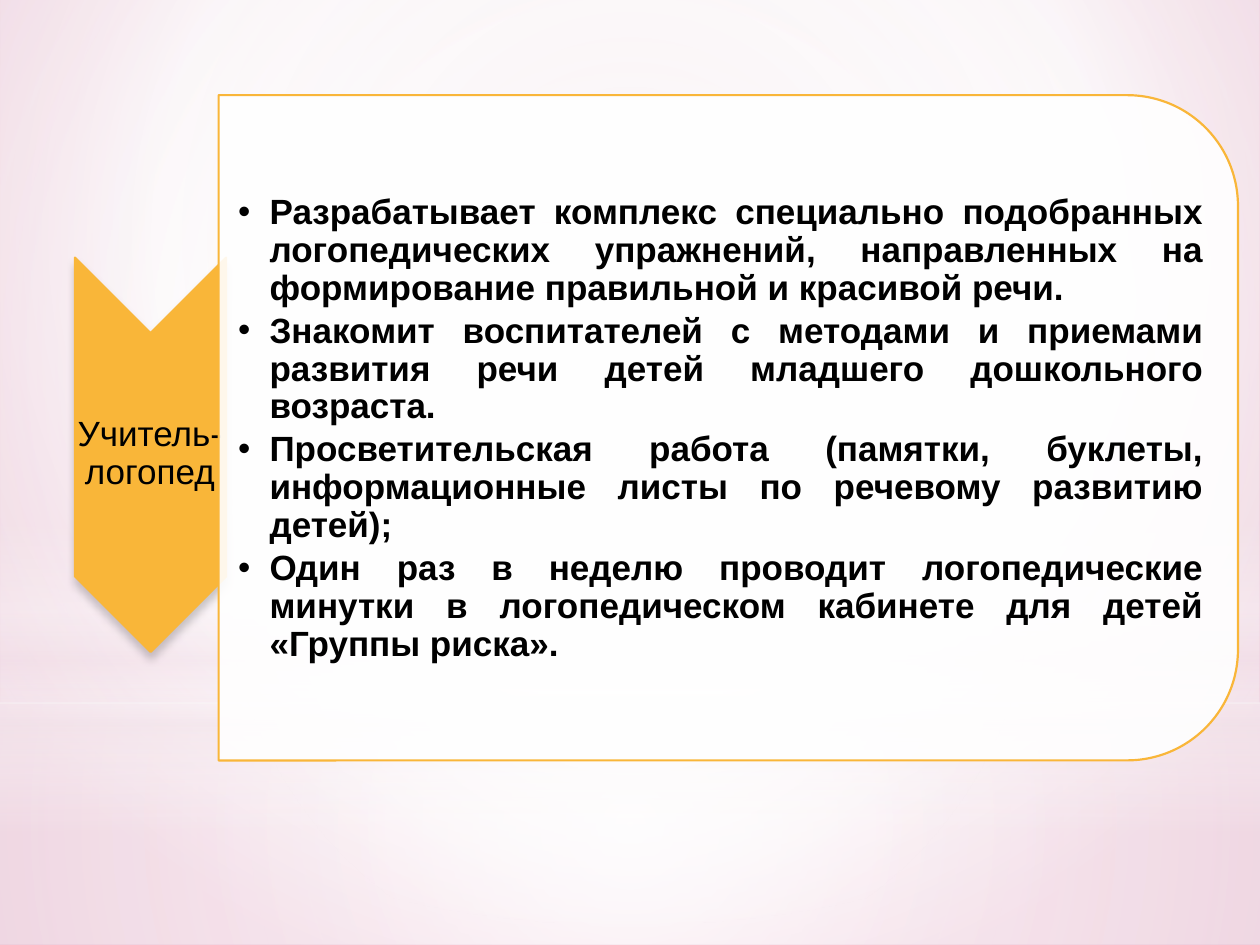
from dataclasses import dataclass
from typing import Optional

from lxml.etree import SubElement
from pptx import Presentation
from pptx.dml.color import RGBColor
from pptx.enum.shapes import MSO_SHAPE
from pptx.enum.text import MSO_ANCHOR, PP_ALIGN
from pptx.oxml.ns import qn
from pptx.util import Inches, Pt


@dataclass(frozen=True)
class Theme:
    """Colours, font and sizes of the slide."""
    gold: str = "F9B639"
    white: str = "FFFFFF"
    blush: str = "F4E7ED"
    pale: str = "EDDAE2"
    rose: str = "E09DBC"
    black: str = "000000"
    font: str = "Arial"
    size: int = 20
    line: float = 1.25


@dataclass(frozen=True)
class Stop:
    """One gradient stop; place and alpha are percents."""
    place: int
    tint: str
    alpha: int = 100


@dataclass(frozen=True)
class Layer:
    """One backdrop shape; without a focus its gradient runs downward."""
    kind: MSO_SHAPE
    box: tuple[float, ...]
    stops: tuple[Stop, ...]
    focus: Optional[tuple[int, ...]] = (50, 50, 50, 50)


@dataclass(frozen=True)
class Block:
    """One turned, outlined shape."""
    kind: MSO_SHAPE
    box: tuple[float, ...]
    tint: str
    alpha: int = 100


@dataclass(frozen=True)
class Copy:
    """One text frame with its paragraph look."""
    box: tuple[float, ...]
    lines: tuple[str, ...]
    align: PP_ALIGN
    inset: float = 0.01
    after: int = 0
    listed: bool = False


THEME = Theme()
WHITE, BLUSH = THEME.white, THEME.blush
BACK = (Stop(0, THEME.pale), Stop(60, WHITE), Stop(100, THEME.rose))
LAYERS = (
    Layer(MSO_SHAPE.RECTANGLE, (0, 5.58, 10, 1.92),
          (Stop(0, WHITE, 91), Stop(37, WHITE, 76), Stop(100, BLUSH, 79))),
    Layer(MSO_SHAPE.RECTANGLE, (0, 0, 10, 5.58),
          (Stop(0, WHITE, 89), Stop(48, WHITE, 62), Stop(100, BLUSH, 79))),
    Layer(MSO_SHAPE.RECTANGLE, (0, 4.12, 10, 2.5),
          (Stop(0, WHITE, 0), Stop(29, WHITE, 30), Stop(45, BLUSH, 40),
           Stop(55, WHITE, 26), Stop(65, BLUSH, 60), Stop(100, WHITE, 0)), None),
    Layer(MSO_SHAPE.OVAL, (0, 1.75, 10, 5.58),
          (Stop(0, WHITE), Stop(56, WHITE, 0))),
)
ARROW = Block(MSO_SHAPE.CHEVRON, (-0.37, 3.01, 3.13, 1.2), THEME.gold)
PANEL = Block(MSO_SHAPE.ROUND_2_SAME_RECTANGLE, (3.14, -0.65, 5.28, 8.09), WHITE, 90)
ROLE = Copy((0.59, 2.64, 1.2, 1.93), ("Учитель-логопед",), PP_ALIGN.CENTER)
DUTIES = Copy((1.73, 1.02, 7.83, 4.77), (
    "Разрабатывает комплекс специально подобранных логопедических упражнений, "
    "направленных на формирование правильной и красивой речи.",
    "Знакомит воспитателей с методами и приемами развития речи детей "
    "младшего дошкольного возраста.",
    "Просветительская работа (памятки, буклеты, информационные листы "
    "по речевому развитию детей);",
    "Один раз в неделю проводит логопедические минутки в логопедическом "
    "кабинете для детей «Группы риска».",
), PP_ALIGN.JUSTIFY, inset=0.16, after=3, listed=True)


def place(box: tuple[float, ...]) -> list[Inches]:
    """Turn a box into lengths."""
    return [Inches(side) for side in box]


def add_tint(node, tint: str, alpha: int) -> None:
    """Add a colour with its opacity."""
    tone = SubElement(node, qn("a:srgbClr"), val=tint)
    if alpha < 100:
        SubElement(tone, qn("a:alpha"), val=str(alpha * 1000))


def shade(fill, root, stops: tuple[Stop, ...], focus: Optional[tuple[int, ...]]) -> None:
    """Give a fill a radial or downward gradient."""
    fill.gradient()
    grad = root.find(".//" + qn("a:gradFill"))
    for child in list(grad):
        grad.remove(child)
    series = SubElement(grad, qn("a:gsLst"))
    for stop in stops:
        add_tint(SubElement(series, qn("a:gs"), pos=str(stop.place * 1000)),
                 stop.tint, stop.alpha)
    if focus:
        way = SubElement(grad, qn("a:path"), path="circle")
        SubElement(way, qn("a:fillToRect"),
                   {side: str(part * 1000) for side, part in zip("ltrb", focus)})
    else:
        SubElement(grad, qn("a:lin"), ang="5400000", scaled="0")


def draw_layer(slide, layer: Layer) -> None:
    """Draw one backdrop shape."""
    shape = slide.shapes.add_shape(layer.kind, *place(layer.box))
    shape.shadow.inherit = False
    shape.line.fill.background()
    shade(shape.fill, shape._element, layer.stops, layer.focus)


def draw_block(slide, block: Block):
    """Draw one outlined shape turned a quarter."""
    shape = slide.shapes.add_shape(block.kind, *place(block.box))
    shape.rotation = 90
    shape.shadow.inherit = False
    shape.fill.solid()
    shape.fill.fore_color.rgb = RGBColor.from_string(block.tint)
    if block.alpha < 100:
        tone = shape._element.spPr.find(qn("a:solidFill"))[0]
        SubElement(tone, qn("a:alpha"), val=str(block.alpha * 1000))
    shape.line.color.rgb = RGBColor.from_string(THEME.gold)
    shape.line.width = Pt(THEME.line)
    return shape


def cast(shape) -> None:
    """Put a soft shadow under a shape."""
    effects = shape._element.spPr.find(qn("a:effectLst"))
    shadow = SubElement(effects, qn("a:outerShdw"), blurRad=str(Pt(5)),
                        dist=str(Pt(4)), dir="5400000", rotWithShape="0")
    add_tint(shadow, THEME.black, 20)


def write(slide, copy: Copy) -> None:
    """Write one text frame, with bullets if listed."""
    frame = slide.shapes.add_textbox(*place(copy.box)).text_frame
    frame.word_wrap = True
    frame.vertical_anchor = MSO_ANCHOR.MIDDLE
    frame.margin_left = Inches(copy.inset)
    frame.margin_top = frame.margin_right = frame.margin_bottom = Inches(0.01)
    frame.text = "\n".join(copy.lines)
    for para in frame.paragraphs:
        para.alignment = copy.align
        para.line_spacing = 0.9
        para.space_after = Pt(copy.after)
        if copy.listed:
            para.level = 1
            props = para._p.get_or_add_pPr()
            props.set("marL", str(Inches(0.25)))
            props.set("indent", str(Inches(-0.25)))
            SubElement(props, qn("a:buFont"), typeface=THEME.font)
            SubElement(props, qn("a:buChar"), char="•")
        for run in para.runs:
            run.font.name = THEME.font
            run.font.size = Pt(THEME.size)
            run.font.bold = copy.listed
            run.font.color.rgb = RGBColor.from_string(THEME.black)


def main() -> None:
    """Build and save the slide."""
    deck = Presentation()
    deck.slide_width, deck.slide_height = Inches(10), Inches(7.5)
    slide = deck.slides.add_slide(deck.slide_layouts[6])
    shade(slide.background.fill, slide._element, BACK, (20, 10, 20, 60))
    for layer in LAYERS:
        draw_layer(slide, layer)
    cast(draw_block(slide, ARROW))
    write(slide, ROLE)
    draw_block(slide, PANEL)
    write(slide, DUTIES)
    deck.save("out.pptx")


if __name__ == "__main__":
    main()
